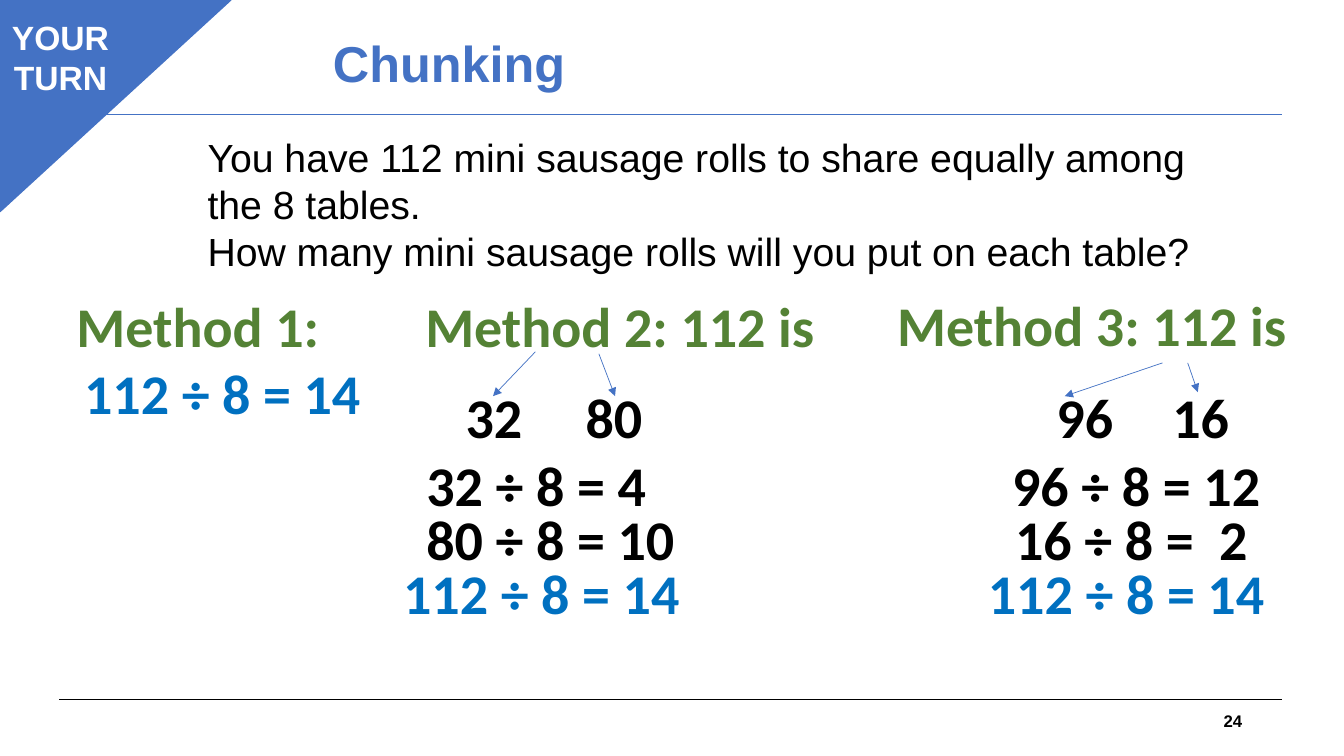
from dataclasses import dataclass

from lxml import etree
from pptx import Presentation
from pptx import util as u
from pptx.dml.color import RGBColor
from pptx.enum import shapes, text
from pptx.oxml import ns

LEFT, CENTER, RIGHT = text.PP_ALIGN.LEFT, text.PP_ALIGN.CENTER, text.PP_ALIGN.RIGHT


@dataclass(frozen=True)
class Theme:
    accent: str = "4472C4"
    method: str = "548235"
    answer: str = "0070C0"
    ink: str = "000000"
    paper: str = "FFFFFF"
    body_font: str = "Arial"
    sum_font: str = "Calibri"
    title: int = 36
    question: int = 28
    sums: int = 40
    badge: int = 24
    page_number: int = 12


class Board:
    """Draws on one slide; lengths are cells of a grid, ten to the inch."""

    def __init__(self, deck, theme):
        self.theme = theme
        self.slide = deck.slides.add_slide(deck.slide_layouts[6])

    def cells(self, *counts):
        return [u.Inches(count / 10) for count in counts]

    def fill_text(self, shape, lines, size, color, font=None, bold=True,
                  align=LEFT, anchor=text.MSO_ANCHOR.TOP, spacing=None):
        frame = shape.text_frame
        frame.word_wrap = True
        frame.vertical_anchor = anchor
        for index, line in enumerate(lines):
            para = frame.add_paragraph() if index else frame.paragraphs[0]
            para.text = line
            para.alignment = align
            para.line_spacing = spacing
            para.font.name = font or self.theme.body_font
            para.font.size = u.Pt(size)
            para.font.bold = bold
            para.font.color.rgb = RGBColor.from_string(color)
        return frame.paragraphs

    def label(self, place, lines, size, color, **style):
        box = self.slide.shapes.add_textbox(*self.cells(*place))
        return self.fill_text(box, lines, size, color, **style)

    def sum_label(self, place, *lines, color=None):
        theme = self.theme
        return self.label(place, lines, theme.sums, color or theme.ink,
                          font=theme.sum_font)

    def block(self, kind, place, width):
        shape = self.slide.shapes.add_shape(kind, *self.cells(*place))
        shape.shadow.inherit = False
        shape.fill.solid()
        shape.fill.fore_color.rgb = RGBColor.from_string(self.theme.accent)
        shape.line.color.rgb = RGBColor.from_string(self.theme.accent)
        shape.line.width = u.Pt(width)
        return shape

    def line(self, start, end, color, width=0.75):
        line = self.slide.shapes.add_connector(
            shapes.MSO_CONNECTOR.STRAIGHT, *self.cells(*start, *end))
        line.line.color.rgb = RGBColor.from_string(color)
        line.line.width = u.Pt(width)
        etree.SubElement(line.element.spPr, ns.qn("a:effectLst"))
        return line

    def arrow(self, start, end):
        arrow = self.line(start, end, self.theme.accent, 0.5)
        outline = arrow.element.spPr.find(ns.qn("a:ln"))
        etree.SubElement(outline, ns.qn("a:tailEnd"), type="triangle")

    def corner(self):
        """The blue corner, square at the top left, with its badge."""
        theme = self.theme
        triangle = self.block(shapes.MSO_SHAPE.ISOSCELES_TRIANGLE, (0, 0, 22.9, 21), 1)
        triangle.adjustments[0] = 0
        triangle.element.spPr.xfrm.set("flipV", "1")
        badge = self.block(shapes.MSO_SHAPE.RECTANGLE, (0.1, 1.2, 11.8, 8.3), 0.75)
        self.fill_text(badge, ["YOUR ", "TURN"], theme.badge, theme.paper, align=CENTER)

    def chunking(self, heading, place, chunks, arrows, sums):
        """A method that splits the number; the last sum is the answer."""
        self.sum_label((*place, 43, 7.7), heading, color=self.theme.method)
        for left, chunk in chunks:
            self.sum_label((left, 37.5, 7.7, 7.7), chunk)
        for start, end in arrows:
            self.arrow(start, end)
        for row, (left, equation) in enumerate(sums):
            last = row == len(sums) - 1
            self.sum_label((left, 44.2 + 5.35 * row, 29.7, 7.7), equation,
                           color=self.theme.answer if last else None)


def main():
    deck = Presentation()
    deck.slide_width, deck.slide_height = u.Inches(13.33), u.Inches(7.5)
    theme = Theme()
    board = Board(deck, theme)
    middle = text.MSO_ANCHOR.MIDDLE

    for row, color in ((69.4, theme.ink), (11.4, theme.accent)):
        board.line((5.9, row), (127.2, row), color)
    board.label((94.2, 69.5, 30, 4), ["24"], theme.page_number, theme.ink,
                align=RIGHT, anchor=middle)
    board.corner()
    board.label((17.7, 1, 53.7, 11.1), ["Chunking"], theme.title, theme.accent,
                align=CENTER, anchor=middle, spacing=0.9)
    board.label((19.6, 12.7, 100.2, 15.1),
                ["You have 112 mini sausage rolls to share equally among\vthe 8 tables.",
                 "How many mini sausage rolls will you put on each table?"],
                theme.question, theme.ink, bold=False)

    answer = "112 ÷ 8 = 14"
    heading, result = board.sum_label((6.6, 28.4, 30.9, 14.5), "Method 1:", answer,
                                      color=theme.method)
    result.alignment = CENTER
    result.font.color.rgb = RGBColor.from_string(theme.answer)

    board.chunking(
        "Method 2: 112 is", (41.2, 28.4),
        chunks=[(45.2, "32"), (57.1, "80")],
        arrows=[((53.1, 34.9), (48.9, 39.3)), ((59.4, 35.1), (61, 39.3))],
        sums=[(41.3, "32 ÷ 8 = 4"), (41.3, "80 ÷ 8 = 10"), (39, answer)])
    board.chunking(
        "Method 3: 112 is", (88, 28.3),
        chunks=[(103.8, "96"), (115.3, "16")],
        arrows=[((115.3, 36), (105.6, 39.3)), ((117.8, 36), (118.8, 38.9))],
        sums=[(99.4, "96 ÷ 8 = 12"), (99.7, "16 ÷ 8 =  2"), (97, answer)])
    deck.save("out.pptx")


if __name__ == "__main__":
    main()
